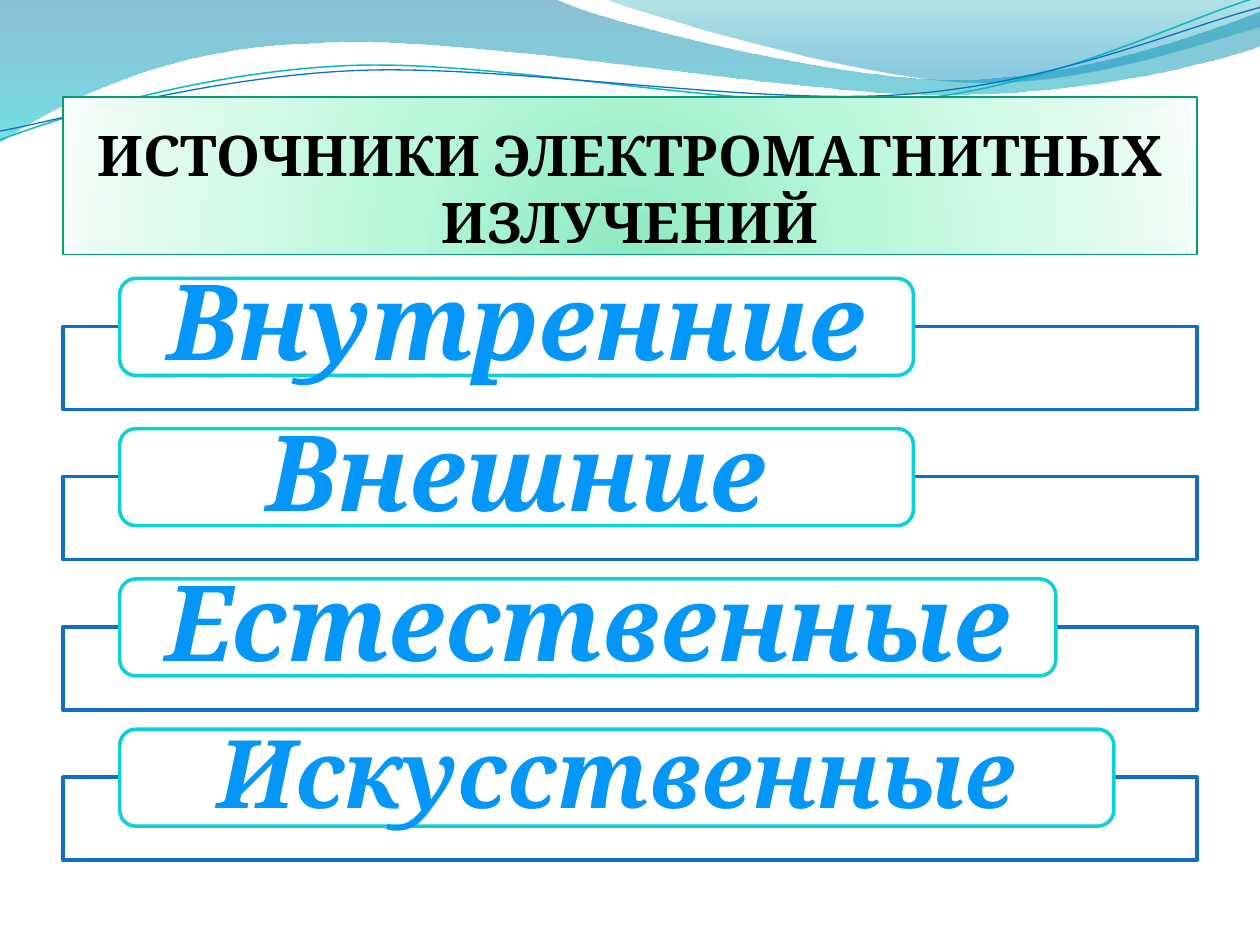
import math

import pptx
import pptx.dml.color
import pptx.enum.shapes
import pptx.enum.text
import pptx.oxml
import pptx.oxml.ns
import pptx.util
from lxml import etree

RGBColor = pptx.dml.color.RGBColor
Shape = pptx.enum.shapes.MSO_SHAPE
Anchor = pptx.enum.text.MSO_ANCHOR
Align = pptx.enum.text.PP_ALIGN
Pt = pptx.util.Pt
qn = pptx.oxml.ns.qn

BLACK = RGBColor(0x00, 0x00, 0x00)
WHITE = RGBColor(0xFF, 0xFF, 0xFF)
BLUE = RGBColor(0x0F, 0x6F, 0xC6)
CYAN = RGBColor(0x0B, 0xD0, 0xD9)
TEAL = RGBColor(0x0A, 0xB8, 0xBF)
GREEN = RGBColor(0x0A, 0x9B, 0x74)
LABEL_BLUE = RGBColor(0x04, 0x97, 0xF9)
DEEP_BLUE = RGBColor(0x00, 0x74, 0xA1)
BRIGHT_CYAN = RGBColor(0x00, 0xC6, 0xCF)
DARK_CYAN = RGBColor(0x00, 0xA1, 0xA9)
MID_BLUE = RGBColor(0x00, 0x8B, 0xBF)
MINTS = [
    (0, RGBColor(0x8D, 0xEA, 0xC2), 100),
    (43, RGBColor(0xBA, 0xF8, 0xDB), 100),
    (93, RGBColor(0xEA, 0xFC, 0xF3), 100),
    (100, RGBColor(0xF7, 0xFF, 0xFB), 100),
]
DOWNWARD = '<a:lin ang="5400000" scaled="0"/>'
RADIAL = ('<a:path path="circle"><a:fillToRect l="50000" t="130000" '
          'r="50000" b="-30000"/></a:path>')

FONT = "Cambria"
COLUMNS, ROWS = 10, 7.5
UNIT = pptx.util.Inches(1)
RIPPLE_TILT = -2.7

WAVES = [
    ([(0, 0), (4.4, -0.01),
      (4.76, 0.17, 6.64, 0.63, 7.58, 0.63), (8.53, 0.63, 9.58, 0.26, 10, 0.09),
      (10.01, 0.36),
      (9.83, 0.44, 8.7, 0.76, 7.46, 0.75), (6.22, 0.75, 3.82, 0.28, 2.57, 0.34),
      (1.29, 0.36, 0.46, 0.83, -0.01, 1.13)],
     [(0, DEEP_BLUE, 45), (100, BRIGHT_CYAN, 55)]),
    ([(4.79, -0.01),
      (5.09, 0.11, 6.82, 0.62, 7.69, 0.65), (8.56, 0.69, 9.61, 0.32, 10, 0.21),
      (10, 0)],
     [(0, DARK_CYAN, 30), (80, MID_BLUE, 45)]),
]
RIPPLES = [
    ([(0, 1.11),
      (0.48, 0.93, 1.58, 0.57, 2.77, 0.52), (3.95, 0.47, 5.93, 0.89, 7.13, 0.8),
      (8.33, 0.71, 9.38, 0.15, 9.98, -0.02)], (4.99, 0.58), TEAL, 0.85),
    ([(0, 1.04),
      (0.47, 0.96, 1.64, 0.61, 2.83, 0.56), (4.03, 0.51, 5.97, 0.84, 7.17, 0.75),
      (8.36, 0.67, 9.41, 0.21, 10, 0.06)], (5, 0.59), BLUE, 0.75),
]
SOURCES = [
    ("Внутренние", 6.3, 60),
    ("Внешние", 6.3, 60),
    ("Естественные", 7.43, 60),
    ("Искусственные", 7.89, 54),
]


def grid(*lengths):
    return [round(length * UNIT) for length in lengths]


def set_gradient(shape, stops, direction):
    marks = ""
    for place, color, opacity in stops:
        alpha = f'<a:alpha val="{opacity * 1000}"/>' if opacity < 100 else ""
        marks += (f'<a:gs pos="{place * 1000}"><a:srgbClr val="{color}">'
                  f'{alpha}</a:srgbClr></a:gs>')
    gradient = pptx.oxml.parse_xml(
        f'<a:gradFill {pptx.oxml.ns.nsdecls("a")} rotWithShape="1">'
        f'<a:gsLst>{marks}</a:gsLst>{direction}</a:gradFill>')
    shape.fill.background()
    none = shape.element.spPr.find(qn("a:noFill"))
    none.getparent().replace(none, gradient)


def set_opacity(shape, percent):
    color = shape.element.spPr.find(f'{qn("a:solidFill")}/{qn("a:srgbClr")}')
    etree.SubElement(color, qn("a:alpha"), val=str(percent * 1000))


def outline(shape, color, width):
    shape.line.color.rgb = color
    shape.line.width = Pt(width)


def turn(point, center, degrees):
    angle = math.radians(degrees)
    x, y = point[0] - center[0], point[1] - center[1]
    return (center[0] + x * math.cos(angle) - y * math.sin(angle),
            center[1] + x * math.sin(angle) + y * math.cos(angle))


def bend(shape, segments):
    corners = iter(list(shape.element.spPr.iter(qn("a:lnTo"))))
    for segment in segments[1:]:
        handles = [next(corners) for _ in range(len(segment) // 2)]
        if len(handles) == 3:
            curve = etree.Element(qn("a:cubicBezTo"))
            handles[0].addprevious(curve)
            for handle in handles:
                curve.append(handle[0])
                handle.getparent().remove(handle)


def add_curve(slide, left, top, segments, closed, center=(0, 0), tilt=0):
    points = [turn(segment[i:i + 2], center, -tilt)
              for segment in segments for i in range(0, len(segment), 2)]
    start, *others = [grid(left + x, top + y) for x, y in points]
    builder = slide.shapes.build_freeform(*start)
    builder.add_line_segments(others, close=closed)
    curve = builder.convert_to_shape()
    bend(curve, segments)
    curve.rotation = tilt
    curve.shadow.inherit = False
    return curve


def add_box(slide, kind, left, top, width, height):
    box = slide.shapes.add_shape(kind, *grid(left, top, width, height))
    box.shadow.inherit = False
    return box


def write(shape, text, size, color, insets, anchor):
    frame = shape.text_frame
    frame.word_wrap = True
    frame.vertical_anchor = anchor
    (frame.margin_left, frame.margin_top,
     frame.margin_right, frame.margin_bottom) = grid(*insets)
    paragraph = frame.paragraphs[0]
    paragraph.text = text
    paragraph.alignment = Align.CENTER
    paragraph.font.name = FONT
    paragraph.font.size = Pt(size)
    paragraph.font.bold = True
    paragraph.font.color.rgb = color
    return paragraph


def add_wave_header(slide, left, top):
    for segments, stops in WAVES:
        wave = add_curve(slide, left, top, segments, True)
        set_gradient(wave, stops, DOWNWARD)
        wave.line.fill.background()
    for segments, center, color, width in RIPPLES:
        ripple = add_curve(slide, left, top, segments, False, center, RIPPLE_TILT)
        ripple.fill.background()
        outline(ripple, color, width)


def add_title(slide, left, top, width, height):
    title = add_box(slide, Shape.RECTANGLE, left, top, width, height)
    set_gradient(title, MINTS, RADIAL)
    outline(title, GREEN, 0.75)
    write(title, "ИСТОЧНИКИ ЭЛЕКТРОМАГНИТНЫХ ИЗЛУЧЕНИЙ", 32, BLACK,
          (0, 0.05, 0, 0), Anchor.BOTTOM)


def add_source_list(slide, left, top, width, height):
    pitch = height / len(SOURCES)
    for row, (name, label_width, size) in enumerate(SOURCES):
        row_top = top + row * pitch
        panel = add_box(slide, Shape.RECTANGLE, left, row_top + 0.38, width, 0.66)
        panel.fill.solid()
        panel.fill.fore_color.rgb = WHITE
        set_opacity(panel, 90)
        outline(panel, BLUE, 2)
        label = add_box(slide, Shape.ROUNDED_RECTANGLE,
                        left + width / 20, row_top, label_width, 0.77)
        label.fill.solid()
        label.fill.fore_color.rgb = WHITE
        outline(label, CYAN, 2)
        paragraph = write(label, name, size, LABEL_BLUE, (0.24, 0, 0.24, 0), Anchor.MIDDLE)
        paragraph.font.italic = True
        paragraph.line_spacing = 0.9


def main():
    deck = pptx.Presentation()
    deck.slide_width, deck.slide_height = grid(COLUMNS, ROWS)
    slide = deck.slides.add_slide(deck.slide_layouts[6])
    add_wave_header(slide, 0, 0)
    add_title(slide, 0.5, 0.77, 9, 1.25)
    add_source_list(slide, 0.5, 2.21, 9, 4.77)
    deck.save("out.pptx")


if __name__ == "__main__":
    main()
